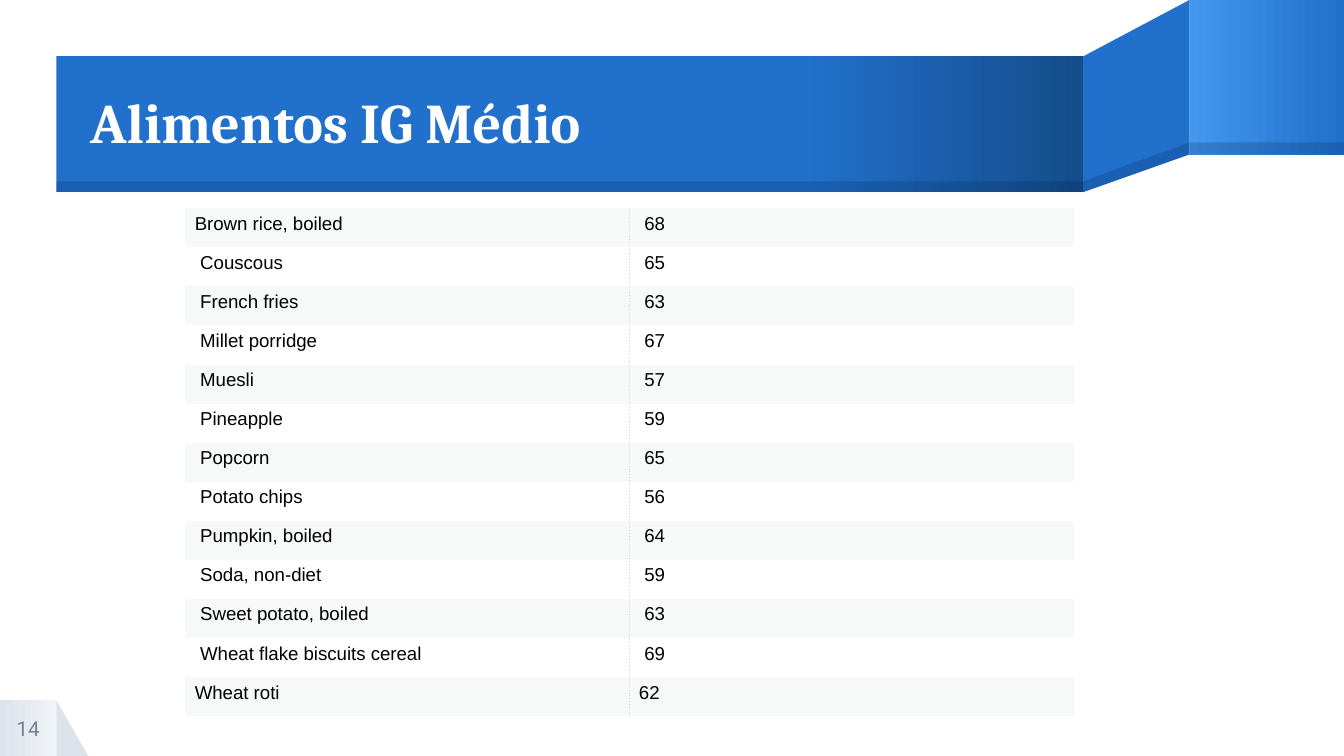
from copy import deepcopy

from lxml.etree import SubElement
from pptx import Presentation
from pptx.dml.color import RGBColor
from pptx.enum.shapes import MSO_SHAPE as SHAPE
from pptx.enum.text import MSO_ANCHOR as ANCHOR, PP_ALIGN as ALIGN
from pptx.oxml import parse_xml
from pptx.oxml.ns import nsdecls, qn
from pptx.util import Inches, Pt

BLUE, SHADE = "2170CC", "001F46"
NO_STYLE = "{2D5ABB26-0587-4C30-8999-92F81FD0307C}"


def paint(shape, *colours, stops=(0, 100), alpha=None):
    """Fill with one colour, or with a left-to-right gradient."""
    shape.shadow.inherit = False
    shape.line.fill.background()
    if len(colours) == 1:
        shape.fill.solid()
        shape.fill.fore_color.rgb = RGBColor.from_string(colours[0])
        if alpha:
            solid = shape._element.spPr.find(qn("a:solidFill"))
            SubElement(solid[0], qn("a:alpha")).set("val", str(alpha * 1000))
        return
    shape.fill.gradient()
    shape.fill.gradient_angle = 0
    stop_list = shape._element.spPr.find(qn("a:gradFill")).find(qn("a:gsLst"))
    while len(stop_list) < len(colours):
        stop_list.append(deepcopy(stop_list[0]))
    for stop, colour, position in zip(shape.fill.gradient_stops, colours, stops):
        stop.color.rgb = RGBColor.from_string(colour)
        stop.position = position / 100


def write(frame, text, font_name, size, colour, bold=False):
    frame.text = text
    font = frame.paragraphs[0].runs[0].font
    font.name, font.size, font.bold = font_name, Pt(size), bold
    font.color.rgb = RGBColor.from_string(colour)


# Widescreen slide, 16:9
prs = Presentation()
prs.slide_width = Inches(10)
prs.slide_height = prs.slide_width * 9 // 16
slide = prs.slides.add_slide(prs.slide_layouts[5])
shapes = slide.shapes

# Page number corner and title ribbon, back to front
blocks = [
    (SHAPE.RIGHT_TRIANGLE, (0.42, 5.21, 0.24, 0.42), ["DDE3EB"], {}),
    (SHAPE.RECTANGLE, (0, 5.21, 0.42, 0.42), ["DDE3EB", "F0F3F7"], {}),
    (SHAPE.RECTANGLE, (8.85, 0, 1.15, 1.15), ["4397EE", BLUE], {}),
    (SHAPE.RECTANGLE, (0.42, 0.42, 7.64, 1.01), [BLUE, BLUE, "154C8A"], {"stops": (0, 73, 100)}),
    (SHAPE.RECTANGLE, (8.85, 1.06, 1.15, 0.09), [SHADE], {"alpha": 20}),
    (SHAPE.RECTANGLE, (0.42, 1.35, 7.64, 0.08), [SHADE], {"alpha": 20}),
]
for preset, box, colours, options in blocks:
    block = shapes.add_shape(preset, *[Inches(length) for length in box])
    paint(block, *colours, **options)

# Slanted fold of the ribbon and its shaded lower edge
folds = [
    ([(8.85, 0), (8.06, 0.42), (8.06, 1.43), (8.85, 1.15)], BLUE, None),
    ([(8.85, 1.06), (8.06, 1.35), (8.06, 1.43), (8.85, 1.15)], SHADE, 20),
]
for corners, colour, alpha in folds:
    points = [(Inches(x), Inches(y)) for x, y in corners]
    builder = shapes.build_freeform(*points[0])
    builder.add_line_segments(points[1:], close=True)
    paint(builder.convert_to_shape(), colour, alpha=alpha)

# Title, raised above the ribbon
title = shapes.title
title.left, title.top = Inches(0.67), Inches(0.43)
title.width, title.height = Inches(7.39), Inches(1.01)
shapes._spTree.append(title._element)
write(title.text_frame, "Alimentos IG Médio", "Cambria", 30, "FFFFFF", bold=True)
title.text_frame.paragraphs[0].alignment = ALIGN.LEFT
title.text_frame.paragraphs[0].line_spacing = 0.9

# Page number
page_number = shapes.add_textbox(0, Inches(5.21), Inches(0.42), Inches(0.42))
write(page_number.text_frame, "14", "Roboto", 11, "748394")
page_number.text_frame.paragraphs[0].alignment = ALIGN.CENTER

for frame in (title.text_frame, page_number.text_frame):
    frame.word_wrap = True
    frame.vertical_anchor = ANCHOR.MIDDLE
    frame.margin_left = frame.margin_right = 0
    frame.margin_top = frame.margin_bottom = 0

# Foods with their glycemic index
foods = [
    ("Brown rice, boiled", 68),
    ("Couscous", 65),
    ("French fries", 63),
    ("Millet porridge", 67),
    ("Muesli", 57),
    ("Pineapple", 59),
    ("Popcorn", 65),
    ("Potato chips", 56),
    ("Pumpkin, boiled", 64),
    ("Soda, non-diet", 59),
    ("Sweet potato, boiled", 63),
    ("Wheat flake biscuits cereal", 69),
    ("Wheat roti", 62),
]
flush_cells = {"Brown rice, boiled", "Wheat roti", "62"}
food_table = shapes.add_table(
    len(foods), 2, Inches(1.38), Inches(1.55), Inches(6.61), Inches(3.78)
).table
food_table.first_row = food_table.horz_banding = False
food_table._tbl.tblPr.find(qn("a:tableStyleId")).text = NO_STYLE

for row, food in enumerate(foods):
    for column, value in enumerate(food):
        cell = food_table.cell(row, column)
        write(cell.text_frame, str(value), "Arial", 10, "000000")
        cell.margin_left = Inches(0.07 if str(value) in flush_cells else 0.11)
        cell.margin_right = Inches(0.07)
        cell.margin_top = cell.margin_bottom = Inches(0.04)
        cell.fill.solid()
        cell.fill.fore_color.rgb = RGBColor.from_string("FFFFFF" if row % 2 else "F7F9F9")
        # Dotted divider between the two columns
        side = "lnL" if column else "lnR"
        cell._tc.get_or_add_tcPr().insert(0, parse_xml(
            f'<a:{side} {nsdecls("a")} w="{Pt(0.5)}"><a:solidFill><a:srgbClr val="D3D3D3"/>'
            f'</a:solidFill><a:prstDash val="dot"/></a:{side}>'))

prs.save("out.pptx")
